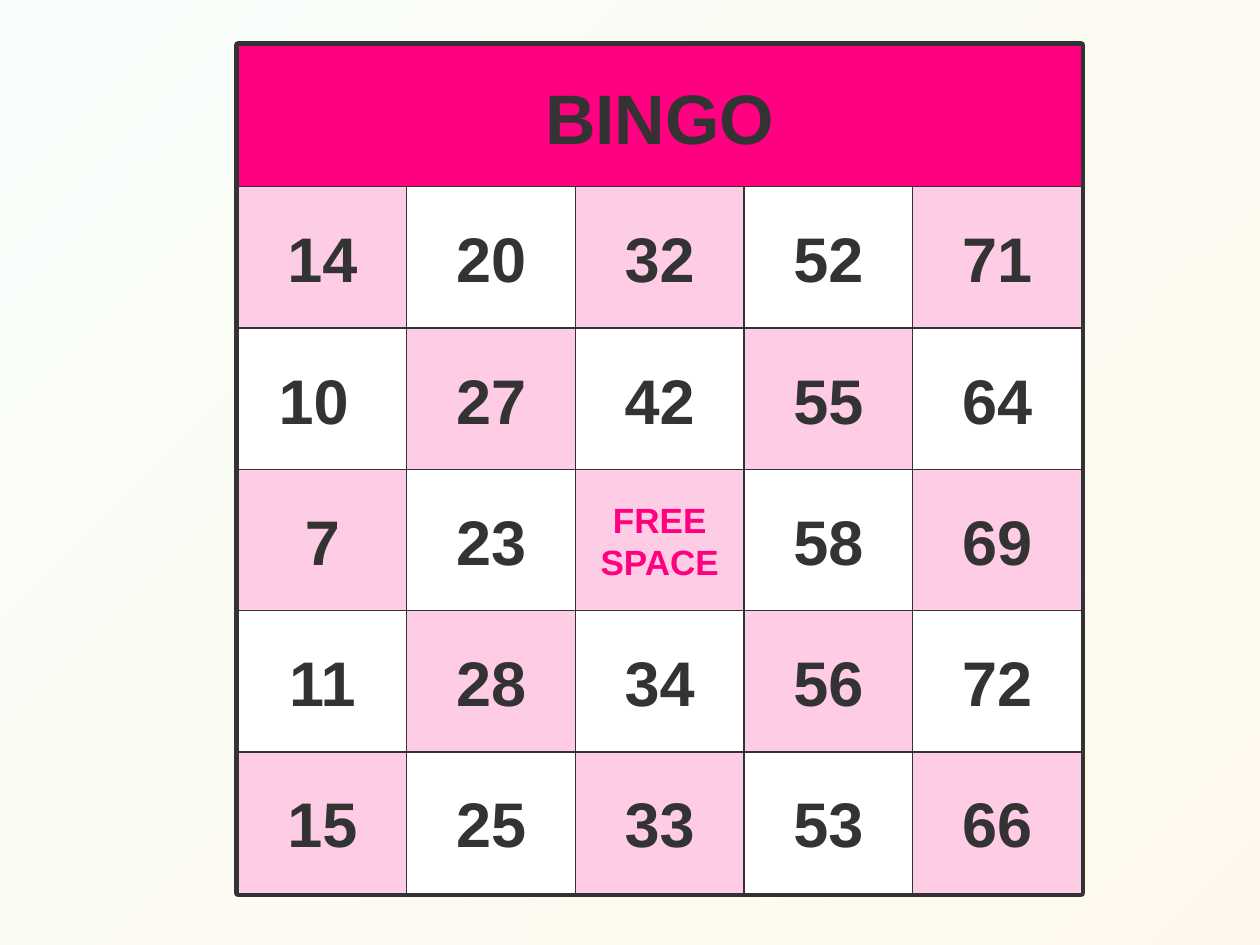
from dataclasses import dataclass

from lxml import etree
from pptx import Presentation
from pptx.dml.color import RGBColor
from pptx.enum import shapes, text
from pptx.oxml import ns
from pptx.util import Pt


@dataclass(frozen=True)
class Theme:
    font: str = "Arial"
    ink: str = "333333"
    hot: str = "FF0080"
    pink: str = "FFCCE6"
    white: str = "FFFFFF"
    wash: tuple = (("F2FDF7", 48), ("FFEFCC", 36))  # colour, opacity in %
    title_size: float = 40
    number_size: float = 36
    free_size: float = 20
    frame_line: float = 4.5
    cell_line: float = 0.75


THEME = Theme()
SLIDE = (0, 0, 720, 540)
CARD = (136, 26, 482, 484.5)
FREE = "FREE\nSPACE"
NUMBERS = [
    ["14", "20", "32", "52", "71"],
    ["10 ", "27", "42", "55", "64"],
    ["7", "23", FREE, "58", "69"],
    ["11", "28", "34", "56", "72"],
    ["15", "25", "33", "53", "66"],
]


def add_rect(parent, box):
    sp = parent.add_shape(shapes.MSO_SHAPE.RECTANGLE, *map(Pt, box))
    sp.shadow.inherit = False
    return sp


def paint(sp, fill, line_width):
    if fill:
        sp.fill.solid()
        sp.fill.fore_color.rgb = RGBColor.from_string(fill)
    else:
        sp.fill.background()
    sp.line.color.rgb = RGBColor.from_string(THEME.ink)
    sp.line.width = Pt(line_width)


def write(sp, words, size, color):
    tf = sp.text_frame
    tf.word_wrap = False
    tf.auto_size = text.MSO_AUTO_SIZE.NONE
    tf.vertical_anchor = text.MSO_ANCHOR.MIDDLE
    tf.margin_left = tf.margin_right = Pt(6)
    tf.margin_top = tf.margin_bottom = Pt(3.6)
    for i, line in enumerate(words.split("\n")):
        p = tf.add_paragraph() if i else tf.paragraphs[0]
        p.alignment = text.PP_ALIGN.CENTER
        r = p.add_run()
        r.text = line
        r.font.name = THEME.font
        r.font.size = Pt(size)
        r.font.bold = True
        r.font.color.rgb = RGBColor.from_string(color)


def add_wash(slide, box):
    """Pale diagonal gradient behind everything."""
    sp = add_rect(slide.shapes, box)
    sp.line.fill.background()
    sp.fill.gradient()
    sp.fill.gradient_angle = 315
    for stop, position, (color, opacity) in zip(sp.fill.gradient_stops, (0, 1), THEME.wash):
        stop.position = position
        stop.color.rgb = RGBColor.from_string(color)
    for clr, (_, opacity) in zip(sp._element.spPr.iter(ns.qn("a:srgbClr")), THEME.wash):
        etree.SubElement(clr, ns.qn("a:alpha"), val=str(opacity * 1000))


def add_header(slide, box):
    """Title band, brought in front of the card frame."""
    sp = slide.shapes.title
    sp.left, sp.top, sp.width, sp.height = map(Pt, box)
    paint(sp, THEME.hot, THEME.cell_line)
    write(sp, "BINGO", THEME.title_size, THEME.ink)
    slide.shapes._spTree.append(sp._element)


def add_card(slide, box):
    """Frame, checkered number grid and header."""
    left, top, width, height = box
    cell_w = width / len(NUMBERS[0])
    cell_h = height / (len(NUMBERS) + 1)
    group = slide.shapes.add_group_shape().shapes

    paint(add_rect(group, box), None, THEME.frame_line)

    for row, numbers in enumerate(NUMBERS):
        for col, words in enumerate(numbers):
            sp = add_rect(group, (left + col * cell_w, top + (row + 1) * cell_h, cell_w, cell_h))
            paint(sp, THEME.white if (row + col) % 2 else THEME.pink, THEME.cell_line)
            if words == FREE:
                write(sp, words, THEME.free_size, THEME.hot)
            else:
                write(sp, words, THEME.number_size, THEME.ink)

    add_header(slide, (left, top, width, cell_h))


def main():
    prs = Presentation()
    prs.slide_width, prs.slide_height = Pt(SLIDE[2]), Pt(SLIDE[3])
    slide = prs.slides.add_slide(prs.slide_layouts.get_by_name("Title Only"))
    add_wash(slide, SLIDE)
    add_card(slide, CARD)
    prs.save("out.pptx")


if __name__ == "__main__":
    main()
